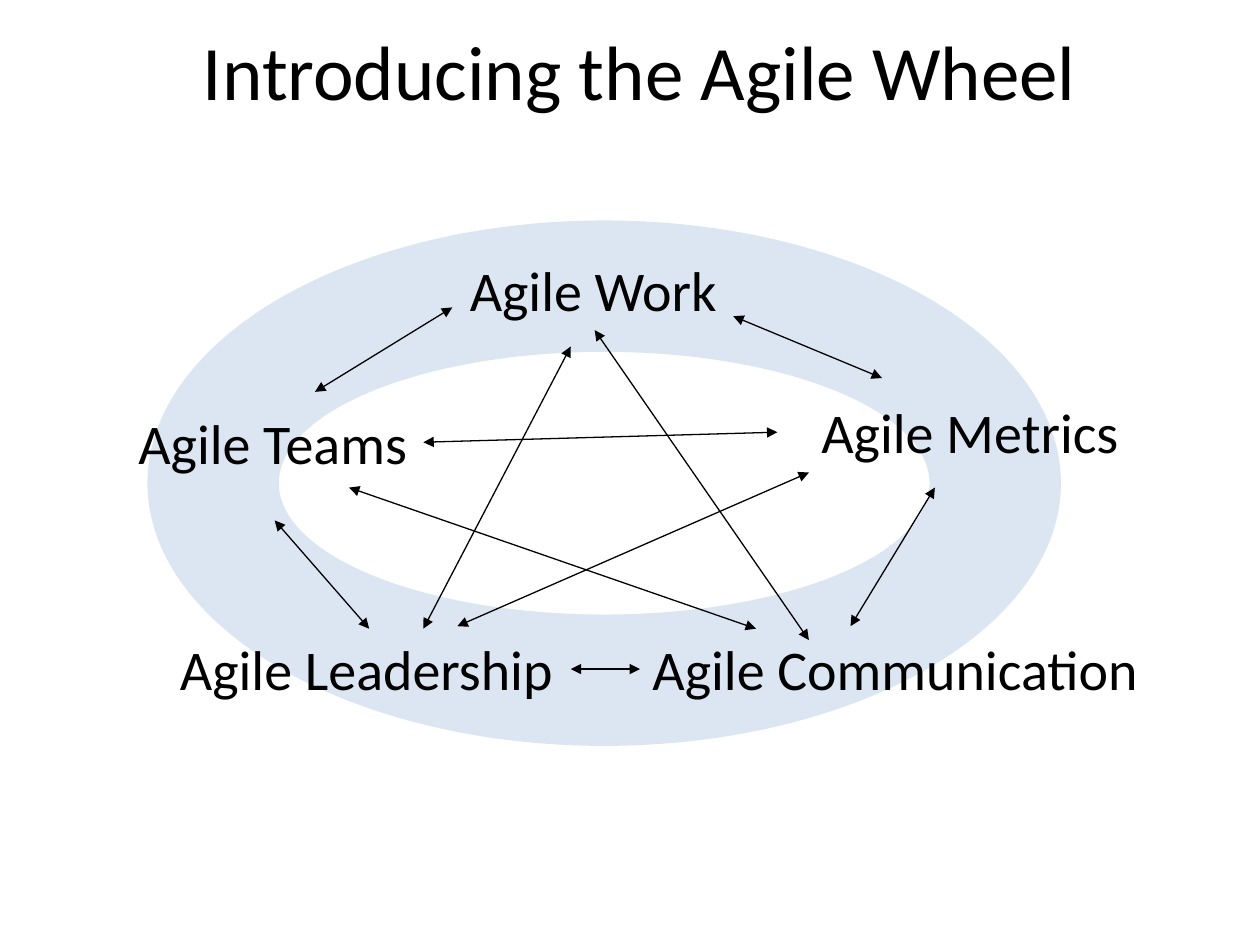
"""Build the Agile Wheel slide: a ring, five labels and the arrows between them."""
from typing import NamedTuple

import lxml.etree
import pptx
import pptx.dml.color
import pptx.enum.shapes
import pptx.enum.text
import pptx.oxml.ns
import pptx.util

Inches = pptx.util.Inches
COLORS = {"text": "000000", "ring": "DCE6F2", "arrow": "000000"}
FONT = "Calibri"
LABEL_HEIGHT = 0.64


class Label(NamedTuple):
    text: str
    left: float
    top: float
    width: float


class Arrow(NamedTuple):
    x1: float
    y1: float
    x2: float
    y2: float


LABELS = [
    Label("Agile Work", 3.63, 1.98, 2.18),
    Label("Agile Metrics", 6.42, 3.11, 2.58),
    Label("Agile Communication", 5.08, 4.99, 4.1),
    Label("Agile Teams", 1, 3.19, 2.36),
    Label("Agile Leadership", 1.33, 4.99, 3.19),
]

ARROWS = [
    Arrow(4.53, 2.75, 3.36, 4.99),
    Arrow(4.72, 2.62, 6.42, 5.08),
    Arrow(5.82, 2.51, 7, 3),
    Arrow(3.59, 2.44, 2.5, 3.11),
    Arrow(3.63, 4.97, 6.42, 3.75),
    Arrow(2.77, 3.87, 6, 4.99),
    Arrow(4.53, 5.31, 5.08, 5.31),
    Arrow(3.36, 3.51, 6.17, 3.43),
    Arrow(7.42, 3.87, 6.75, 4.97),
    Arrow(2.18, 4.13, 2.93, 4.99),
]


def rgb(name: str) -> pptx.dml.color.RGBColor:
    """Return a palette colour."""
    return pptx.dml.color.RGBColor.from_string(COLORS[name])


def add_text(s, text: str, left: float, top: float, width: float, height: float, *,
             size: int, wrap: bool = False,
             align=pptx.enum.text.PP_ALIGN.LEFT) -> None:
    """Add a text box holding one formatted paragraph."""
    sp = s.shapes.add_textbox(Inches(left), Inches(top), Inches(width), Inches(height))
    tf = sp.text_frame
    tf.word_wrap = wrap
    if not wrap:
        tf.auto_size = pptx.enum.text.MSO_AUTO_SIZE.SHAPE_TO_FIT_TEXT
    p = tf.paragraphs[0]
    p.alignment = align
    r = p.add_run()
    r.text = text
    r.font.name = FONT
    r.font.size = pptx.util.Pt(size)
    r.font.color.rgb = rgb("text")


def add_ring(s, left: float, top: float, width: float, height: float) -> None:
    """Add the wheel behind the labels."""
    sp = s.shapes.add_shape(pptx.enum.shapes.MSO_SHAPE.DONUT, Inches(left),
                            Inches(top), Inches(width), Inches(height))
    sp.shadow.inherit = False
    sp.fill.solid()
    sp.fill.fore_color.rgb = rgb("ring")
    sp.line.fill.background()


def add_arrow(s, arrow: Arrow) -> None:
    """Add a line with an arrowhead at both ends."""
    qn = pptx.oxml.ns.qn
    sp = s.shapes.add_connector(pptx.enum.shapes.MSO_CONNECTOR.STRAIGHT,
                                *(Inches(v) for v in arrow))
    sp.line.color.rgb = rgb("arrow")
    sp.line.width = pptx.util.Pt(0.75)
    ln = sp.line._get_or_add_ln()
    for end in ("a:headEnd", "a:tailEnd"):
        lxml.etree.SubElement(ln, qn(end), type="triangle")
    lxml.etree.SubElement(sp._element.spPr, qn("a:effectLst"))


def main() -> None:
    """Build and save the slide."""
    prs = pptx.Presentation()
    prs.slide_width, prs.slide_height = Inches(10), Inches(7.5)
    s = prs.slides.add_slide(prs.slide_layouts[6])
    add_text(s, "Introducing the Agile Wheel", 0.58, 0.14, 9, 1.25, size=44,
             wrap=True, align=pptx.enum.text.PP_ALIGN.CENTER)
    add_ring(s, 1.17, 1.75, 7.25, 4.17)
    for label in LABELS:
        add_text(s, *label, LABEL_HEIGHT, size=32)
    for arrow in ARROWS:
        add_arrow(s, arrow)
    prs.save("out.pptx")


if __name__ == "__main__":
    main()
